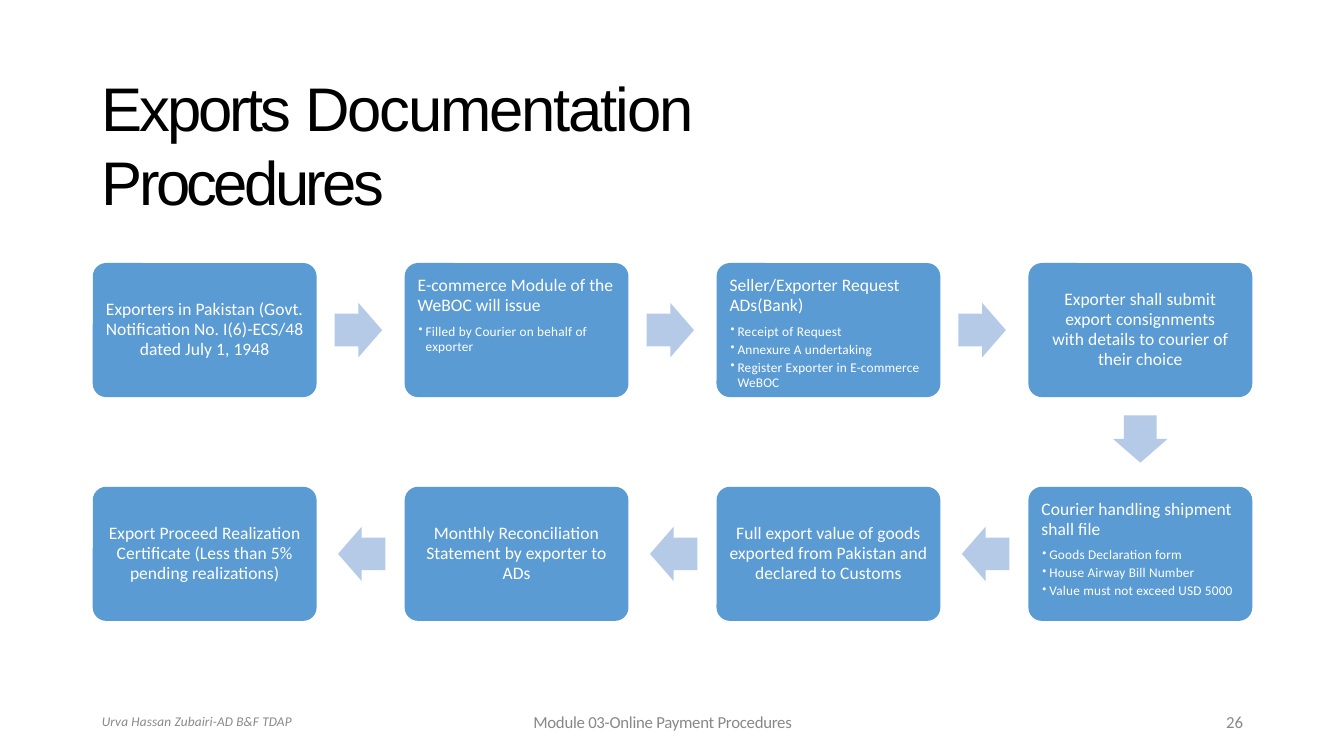
from lxml.etree import SubElement
from pptx import Presentation
from pptx.dml.color import RGBColor
from pptx.enum.shapes import MSO_SHAPE
from pptx.enum.text import MSO_ANCHOR, PP_ALIGN
from pptx.oxml.ns import qn
from pptx.util import Inches, Pt

BLUE = RGBColor(0x5B, 0x9B, 0xD4)
PALE = RGBColor(0xB5, 0xCA, 0xE7)
WHITE = RGBColor(0xFF, 0xFF, 0xFF)
BLACK = RGBColor(0, 0, 0)
GRAY = RGBColor(0x88, 0x88, 0x88)

TITLE = [("Exports ", -2.3), ("Documentation ", -1.6), ("Procedures", -2.6)]

STEPS = [
    ("Exporters in Pakistan (Govt. Notification No. I(6)-ECS/48 dated July 1, 1948", []),
    ("E-commerce Module of the WeBOC will issue",
     ["Filled by Courier on behalf of exporter"]),
    ("Seller/Exporter Request ADs(Bank)",
     ["Receipt of Request", "Annexure A undertaking",
      "Register Exporter in E-commerce WeBOC"]),
    ("Exporter shall submit export consignments with details to courier of their choice", []),
    ("Courier handling shipment shall file",
     ["Goods Declaration form", "House Airway Bill Number",
      "Value must not exceed USD 5000"]),
    ("Full export value of goods exported from Pakistan and declared to Customs", []),
    ("Monthly Reconciliation Statement by exporter to ADs", []),
    ("Export Proceed Realization Certificate (Less than 5% pending realizations)", []),
]

FOOT = [
    ("Urva Hassan Zubairi-AD B&F TDAP", 1.01, 7.08, 2.2, 9.5, True, 0.1),
    ("Module 03-Online Payment Procedures", 5.29, 7.06, 2.9, 12, False, -0.2),
    ("26", 12.16, 7.06, 0.25, 12, False, 0),
]

COLS = 4
LEFT, LAST = 0.92, 10.2
PITCH = (LAST - LEFT) / (COLS - 1)
ROWS = [2.61, 4.83]
WIDE, HIGH = 2.22, 1.33
LONG, SPAN = 0.47, 0.54
INSET, TIGHT = 0.09, 0.16

deck = Presentation()
deck.slide_width, deck.slide_height = Inches(13.33), Inches(7.5)
slide = deck.slides.add_slide(deck.slide_layouts[6])


def style(para, size, color, name="Calibri", gap=0.0):
    font = para.font
    font.name, font.size, font.color.rgb = name, Pt(size), color
    font._rPr.set("spc", str(round(gap * 100)))


def add_text(x, y, w, h):
    frame = slide.shapes.add_textbox(Inches(x), Inches(y), Inches(w), Inches(h)).text_frame
    frame.word_wrap = True
    frame.margin_left = frame.margin_right = frame.margin_top = frame.margin_bottom = 0
    return frame


def add_shape(kind, x, y, w, h, color):
    shape = slide.shapes.add_shape(kind, Inches(x), Inches(y), Inches(w), Inches(h))
    shape.shadow.inherit = False
    shape.fill.solid()
    shape.fill.fore_color.rgb = color
    shape.line.fill.background()
    return shape


def add_bullet(para):
    props = para._p.get_or_add_pPr()
    props.set("marL", str(Inches(0.08)))
    props.set("indent", str(Inches(-0.07)))
    SubElement(props, qn("a:buSzPct")).set("val", "89000")
    SubElement(props, qn("a:buChar")).set("char", "•")


def add_card(x, y, head, items, inset):
    card = add_shape(MSO_SHAPE.ROUNDED_RECTANGLE, x, y, WIDE, HIGH, BLUE)
    card.adjustments[0] = 0.1
    frame = card.text_frame
    frame.word_wrap = True
    frame.margin_left = frame.margin_right = Inches(inset)
    frame.margin_top, frame.margin_bottom = Inches(0.08), Inches(0.1)
    frame.vertical_anchor = MSO_ANCHOR.TOP if items else MSO_ANCHOR.MIDDLE
    para = frame.paragraphs[0]
    para.text = head
    para.alignment = PP_ALIGN.LEFT if items else PP_ALIGN.CENTER
    para.line_spacing = Pt(14.3)
    style(para, 12.5, WHITE, gap=0.07)
    for i, item in enumerate(items):
        para = frame.add_paragraph()
        para.text = item
        para.alignment = PP_ALIGN.LEFT
        add_bullet(para)
        para.line_spacing = Pt(10.9)
        para.space_before = Pt(2 if i else 6)
        style(para, 9.5, WHITE, gap=0.15)


def add_arrow(kind, x, y, w, h):
    arrow = add_shape(kind, x, y, w, h, PALE)
    arrow.adjustments[0], arrow.adjustments[1] = 0.6, 0.5


para = add_text(1.01, 0.69, 7.5, 1.5).paragraphs[0]
for word, gap in TITLE:
    run = para.add_run()
    run.text = word
    run.font._rPr.set("spc", str(round(gap * 100)))
style(para, 44, BLACK, "Arial")

for n, (head, items) in enumerate(STEPS):
    row, step = divmod(n, COLS)
    x = LEFT + PITCH * (COLS - 1 - step if row else step)
    y = ROWS[row]
    add_card(x, y, head, items, TIGHT if n == COLS - 1 else INSET)
    mid = y + (HIGH - SPAN) / 2
    if n == COLS - 1:
        add_arrow(MSO_SHAPE.DOWN_ARROW, x + (WIDE - SPAN) / 2, 4.12, SPAN, LONG)
    elif row == 0:
        add_arrow(MSO_SHAPE.RIGHT_ARROW, x + WIDE + 0.18, mid, LONG, SPAN)
    elif step < COLS - 1:
        add_arrow(MSO_SHAPE.LEFT_ARROW, x - 0.19 - LONG, mid, LONG, SPAN)

for text, x, y, w, size, slant, gap in FOOT:
    para = add_text(x, y, w, 0.2).paragraphs[0]
    para.text = text
    style(para, size, GRAY, gap=gap)
    para.font.italic = slant

deck.save("out.pptx")
